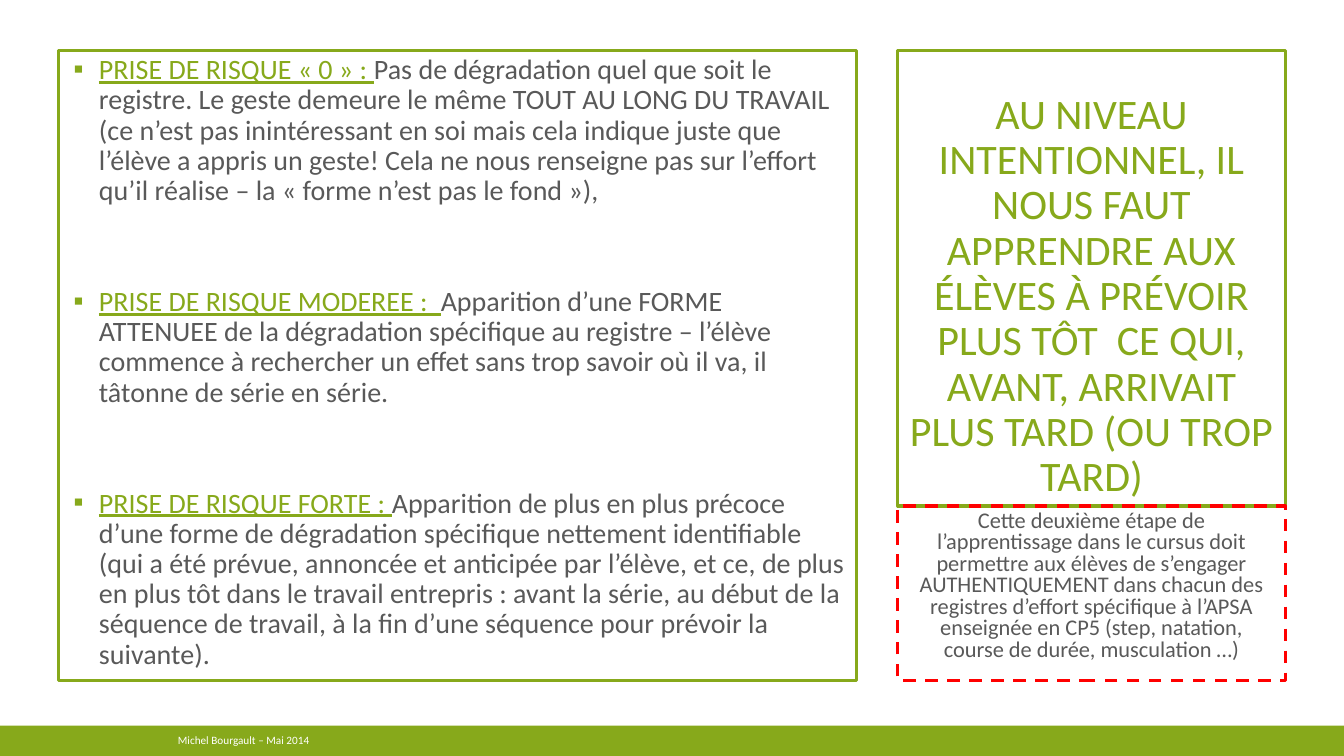
from dataclasses import dataclass

from lxml.etree import SubElement
from pptx import Presentation
from pptx.dml.color import RGBColor
from pptx.enum.dml import MSO_LINE
from pptx.enum.shapes import MSO_SHAPE
from pptx.enum.text import MSO_ANCHOR, PP_ALIGN
from pptx.oxml.ns import qn
from pptx.util import Emu, Inches, Pt

COLUMNS, ROWS = 160, 90
CELL = Inches(1) // 12


@dataclass(frozen=True)
class Theme:
    font: str = "Calibri"
    green: RGBColor = RGBColor(0x87, 0xA9, 0x1B)
    red: RGBColor = RGBColor(0xFF, 0x00, 0x00)
    gray: RGBColor = RGBColor(0x59, 0x59, 0x59)
    white: RGBColor = RGBColor(0xFF, 0xFF, 0xFF)
    title_size: int = 30
    body_size: int = 20
    caption_size: int = 16
    footer_size: int = 8
    border_width: float = 2.25


THEME = Theme()


@dataclass(frozen=True)
class TextRun:
    text: str
    color: RGBColor
    underline: bool = False


@dataclass(frozen=True)
class Panel:
    """A text area placed in grid cells: column, row, columns wide, rows high."""
    column: float
    row: float
    width: float
    height: float
    paragraphs: list[list[TextRun]]
    size: int
    border: RGBColor | None = None
    fill: RGBColor | None = None
    dashed: bool = False
    bulleted: bool = False
    alignment: PP_ALIGN = PP_ALIGN.CENTER
    anchor: MSO_ANCHOR = MSO_ANCHOR.TOP
    line_spacing: float = 0.9
    paragraph_gap: float = 0


def risk_level(heading: str, description: str) -> list[TextRun]:
    return [TextRun(heading, THEME.green, underline=True),
            TextRun(description, THEME.gray)]


RISK_LEVELS = [
    risk_level(
        "PRISE DE RISQUE « 0 » : ",
        "Pas de dégradation quel que soit le registre. Le geste demeure le même "
        "TOUT AU LONG DU TRAVAIL (ce n’est pas inintéressant en soi mais cela "
        "indique juste que l’élève a appris un geste! Cela ne nous renseigne pas "
        "sur l’effort qu’il réalise – la « forme n’est pas le fond »),"),
    risk_level(
        "PRISE DE RISQUE MODEREE :  ",
        "Apparition d’une FORME ATTENUEE de la dégradation spécifique au registre "
        "– l’élève commence à rechercher un effet sans trop savoir où il va, il "
        "tâtonne de série en série."),
    risk_level(
        "PRISE DE RISQUE FORTE : ",
        "Apparition de plus en plus précoce d’une forme de dégradation spécifique "
        "nettement identifiable (qui a été prévue, annoncée et anticipée par "
        "l’élève, et ce, de plus en plus tôt dans le travail entrepris : avant la "
        "série, au début de la séquence de travail, à la fin d’une séquence pour "
        "prévoir la suivante)."),
]
TITLE = TextRun(
    "AU NIVEAU INTENTIONNEL, IL NOUS FAUT APPRENDRE AUX ÉLÈVES À PRÉVOIR PLUS "
    "TÔT  CE QUI, AVANT, ARRIVAIT PLUS TARD (OU TROP TARD)", THEME.green)
CAPTION = TextRun(
    "Cette deuxième étape de l’apprentissage dans le cursus doit permettre aux "
    "élèves de s’engager AUTHENTIQUEMENT dans chacun des registres d’effort "
    "spécifique à l’APSA enseignée en CP5 (step, natation, course de durée, "
    "musculation …)", THEME.gray)
CREDIT = TextRun("Michel Bourgault – Mai 2014", THEME.white)

PANELS = [
    Panel(0, 86.4, COLUMNS, 3.6, [], THEME.footer_size, fill=THEME.green),
    Panel(106.9, 6, 46.1, 54.24, [[TITLE]], THEME.title_size,
          border=THEME.green, anchor=MSO_ANCHOR.BOTTOM),
    Panel(7, 6, 95, 75, RISK_LEVELS, THEME.body_size, border=THEME.green,
          bulleted=True, alignment=PP_ALIGN.LEFT, paragraph_gap=57.6),
    Panel(106.9, 60.24, 46.1, 20.76, [[CAPTION]], THEME.caption_size,
          border=THEME.red, dashed=True, line_spacing=0.8),
    Panel(20, 86.64, 85.2, 3, [[CREDIT]], THEME.footer_size,
          alignment=PP_ALIGN.LEFT, anchor=MSO_ANCHOR.MIDDLE, line_spacing=1),
]


def cells(count: float) -> Emu:
    return Emu(round(count * CELL))


def add_bullet(paragraph) -> None:
    properties = paragraph._p.get_or_add_pPr()
    properties.set("marL", str(Inches(0.3)))
    properties.set("indent", str(Inches(-0.25)))
    color = SubElement(properties, qn("a:buClr"))
    SubElement(color, qn("a:srgbClr"), val=str(THEME.green))
    SubElement(properties, qn("a:buFont"), typeface=THEME.font)
    SubElement(properties, qn("a:buChar"), char="▪")


def add_text(shape, panel: Panel) -> None:
    frame = shape.text_frame
    frame.word_wrap = True
    frame.vertical_anchor = panel.anchor
    for index, runs in enumerate(panel.paragraphs):
        paragraph = frame.add_paragraph() if index else frame.paragraphs[0]
        paragraph.alignment = panel.alignment
        paragraph.line_spacing = panel.line_spacing
        paragraph.space_before = Pt(panel.paragraph_gap if index else 0)
        if panel.bulleted:
            add_bullet(paragraph)
        for text_run in runs:
            run = paragraph.add_run()
            run.text = text_run.text
            run.font.name = THEME.font
            run.font.size = Pt(panel.size)
            run.font.color.rgb = text_run.color
            run.font.underline = text_run.underline


def add_panel(slide, panel: Panel) -> None:
    shape = slide.shapes.add_shape(
        MSO_SHAPE.RECTANGLE, cells(panel.column), cells(panel.row),
        cells(panel.width), cells(panel.height))
    shape.shadow.inherit = False
    if panel.fill is None:
        shape.fill.background()
    else:
        shape.fill.solid()
        shape.fill.fore_color.rgb = panel.fill
    if panel.border is None:
        shape.line.fill.background()
    else:
        shape.line.color.rgb = panel.border
        shape.line.width = Pt(THEME.border_width)
    if panel.dashed:
        shape.line.dash_style = MSO_LINE.DASH
    add_text(shape, panel)


def main() -> None:
    presentation = Presentation()
    presentation.slide_width = cells(COLUMNS)
    presentation.slide_height = cells(ROWS)
    slide = presentation.slides.add_slide(presentation.slide_layouts[6])
    for panel in PANELS:
        add_panel(slide, panel)
    presentation.save("out.pptx")


if __name__ == "__main__":
    main()
